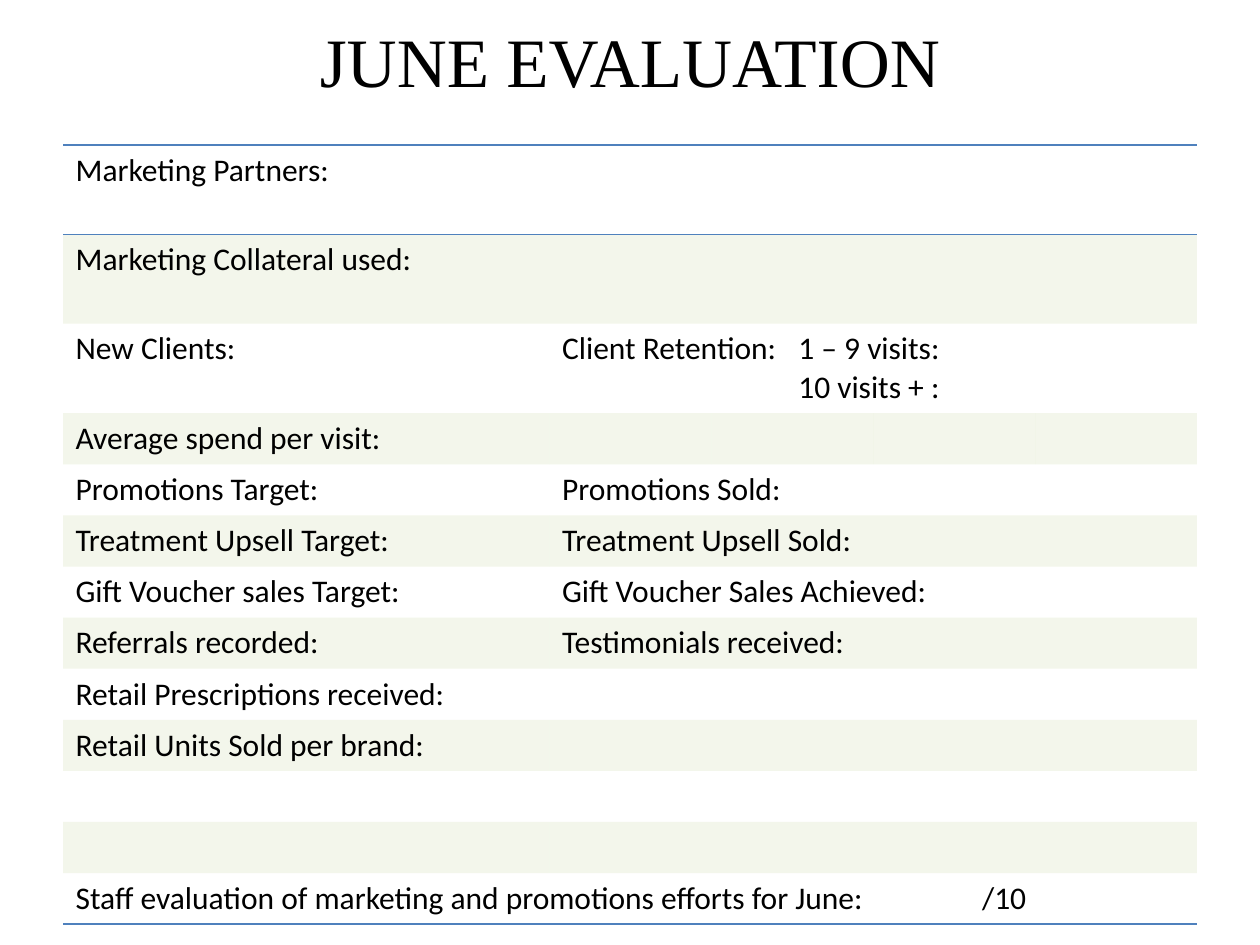
import pptx
import pptx.util
import pptx.dml.color
import pptx.enum.text
import pptx.oxml.ns
import lxml.etree

Pt = pptx.util.Pt
qn = pptx.oxml.ns.qn

HEADING = "JUNE EVALUATION"
FULL, PAIR, OPEN = "full", "pair", "open"
EVALUATION = [
    (FULL, "Marketing Partners:", ""),
    (FULL, "Marketing Collateral used:", ""),
    (PAIR, "New Clients:", "Client Retention:\t1 – 9 visits:\n\t10 visits + :"),
    (OPEN, "Average spend per visit:", ""),
    (PAIR, "Promotions Target:", "Promotions Sold:"),
    (PAIR, "Treatment Upsell Target:", "Treatment Upsell Sold:"),
    (PAIR, "Gift Voucher sales Target:", "Gift Voucher Sales Achieved:"),
    (PAIR, "Referrals recorded:", "Testimonials received:"),
    (OPEN, "Retail Prescriptions received:", ""),
    (PAIR, "Retail Units Sold per brand:", ""),
    (PAIR, "", ""),
    (PAIR, "", ""),
    (FULL, "Staff evaluation of marketing and promotions efforts for June:\t/10", ""),
]
COLUMN_WIDTHS = [278] + [92.5] * 4
TALL_ROWS, TALL, SHORT = 3, 51.1, 29.2
RETENTION_TAB, SCORE_TAB = 135, 518
RULES = {0: ("a:lnT", "a:lnB"), len(EVALUATION) - 1: ("a:lnB",)}
BLACK, RULE_BLUE, BAND_GREEN = "000000", "4F81BD", "C3D69B"
NO_STYLE = "{2D5ABB26-0587-4C30-8999-92F81FD0307C}"


def color(hex_value):
    return pptx.dml.color.RGBColor.from_string(hex_value)


def format_runs(paragraph, font_name, size):
    for run in paragraph.runs:
        run.font.name = font_name
        run.font.size = Pt(size)
        run.font.bold = False
        run.font.color.rgb = color(BLACK)


def add_rule(cell, side):
    rule = lxml.etree.SubElement(cell._tc.get_or_add_tcPr(), qn(side), w=str(Pt(1)))
    solid = lxml.etree.SubElement(rule, qn("a:solidFill"))
    lxml.etree.SubElement(solid, qn("a:srgbClr"), val=RULE_BLUE)


def fill_band(cell):
    cell.fill.solid()
    cell.fill.fore_color.rgb = color(BAND_GREEN)
    green = cell._tc.tcPr.find(".//" + qn("a:solidFill") + "/" + qn("a:srgbClr"))
    lxml.etree.SubElement(green, qn("a:alpha"), val="20000")


def write(cell, text, tab):
    cell.text_frame.text = text
    for paragraph in cell.text_frame.paragraphs:
        if "\t" in text:
            stops = lxml.etree.SubElement(paragraph._p.get_or_add_pPr(), qn("a:tabLst"))
            lxml.etree.SubElement(stops, qn("a:tab"), pos=str(Pt(tab)), algn="l")
        format_runs(paragraph, "Calibri", 18)


def add_heading(slide):
    heading = slide.shapes.title
    heading.left, heading.top, heading.width, heading.height = Pt(36), Pt(9.4), Pt(648), Pt(49.7)
    frame = heading.text_frame
    frame.text = HEADING
    frame.vertical_anchor = pptx.enum.text.MSO_ANCHOR.MIDDLE
    frame.auto_size = pptx.enum.text.MSO_AUTO_SIZE.NONE
    frame.paragraphs[0].alignment = pptx.enum.text.PP_ALIGN.CENTER
    format_runs(frame.paragraphs[0], "Times New Roman", 39.6)


def add_evaluation(slide):
    heights = [TALL if i < TALL_ROWS else SHORT for i in range(len(EVALUATION))]
    frame = slide.shapes.add_table(
        len(EVALUATION), len(COLUMN_WIDTHS),
        Pt(36), Pt(82.8), Pt(sum(COLUMN_WIDTHS)), Pt(sum(heights)))
    table = frame.table
    table.first_row = table.horz_banding = False
    table._tbl.tblPr.find(qn("a:tableStyleId")).text = NO_STYLE
    for column, width in zip(table.columns, COLUMN_WIDTHS):
        column.width = Pt(width)

    last = len(COLUMN_WIDTHS) - 1
    for i, (layout, label, result) in enumerate(EVALUATION):
        table.rows[i].height = Pt(heights[i])
        for j in range(last + 1):
            cell = table.cell(i, j)
            for side in RULES.get(i, ()):
                add_rule(cell, side)
            if i % 2:
                fill_band(cell)
            else:
                cell.fill.background()
        if layout != OPEN:
            table.cell(i, 0 if layout == FULL else 1).merge(table.cell(i, last))
        write(table.cell(i, 0), label, SCORE_TAB)
        if layout == PAIR:
            write(table.cell(i, 1), result, RETENTION_TAB)


def main():
    deck = pptx.Presentation()
    deck.slide_width, deck.slide_height = Pt(720), Pt(540)
    slide = deck.slides.add_slide(deck.slide_layouts[5])
    add_heading(slide)
    add_evaluation(slide)
    deck.save("out.pptx")


if __name__ == "__main__":
    main()
